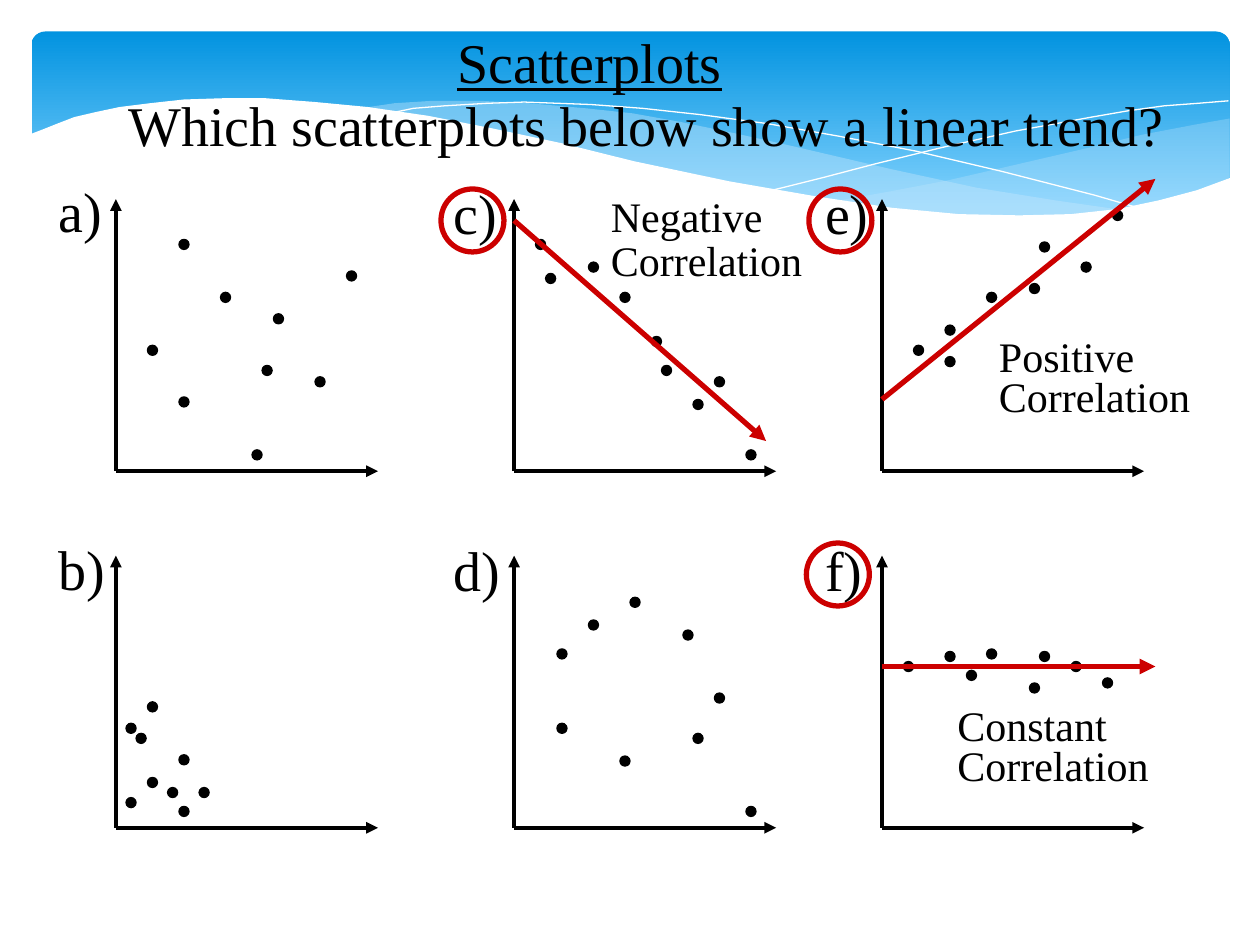
from lxml.etree import SubElement
from pptx import Presentation
from pptx.dml.color import RGBColor
from pptx.enum.shapes import MSO_CONNECTOR, MSO_SHAPE
from pptx.enum.text import MSO_ANCHOR, MSO_AUTO_SIZE, PP_ALIGN
from pptx.oxml.ns import qn
from pptx.util import Inches, Pt

BLACK = RGBColor(0x00, 0x00, 0x00)
WHITE = RGBColor(0xFF, 0xFF, 0xFF)
RED = RGBColor(0xCC, 0x00, 0x00)
SKY_TOP = RGBColor(0x02, 0x93, 0xE0)
SKY_BOTTOM = RGBColor(0x83, 0xD3, 0xFE)
MIST = RGBColor(0xC6, 0xE7, 0xFC)
FONT = "Times New Roman"

# Grid of plots: y axes, x axes, axis lengths
COL_X = (0.92, 4.08, 7)
ROW_Y = (3.74, 6.57)
AXIS_W, AXIS_H = 2.08, 2.16
DOT, RING = 0.08, 0.5

# Banner waves: outline, fill opacity in percent (None for a thin white line)
WAVES = [
    ([(9.76, 0.94), (9.48, 0.99), (9.06, 1.07), (8.61, 1.18), (8.05, 1.31),
      (7.53, 1.43), (7.06, 1.52), (6.61, 1.6), (7.05, 1.65), (7.45, 1.69),
      (7.81, 1.72), (8.24, 1.72), (8.63, 1.7), (8.97, 1.65), (9.28, 1.58),
      (9.49, 1.52), (9.76, 1.41)], MIST, 29),
    ([(8.93, 1.67), (8.37, 1.59), (7.75, 1.49), (7.06, 1.34), (6.29, 1.16),
      (5.84, 1.06), (5.41, 0.97), (5.02, 0.9), (4.65, 0.86), (4.2, 0.82),
      (3.8, 0.8), (3.44, 0.8), (3.13, 0.82), (2.86, 0.86), (3.23, 0.9),
      (3.62, 0.97), (4.04, 1.06), (4.49, 1.16), (5.3, 1.35), (6.01, 1.5),
      (6.5, 1.58), (6.95, 1.65), (7.48, 1.7), (7.96, 1.73), (8.48, 1.72)],
     MIST, 40),
    ([(3.09, 0.9), (3.28, 0.86), (3.53, 0.84), (3.87, 0.82), (4.16, 0.81),
      (4.69, 0.83), (5.1, 0.86), (5.56, 0.91), (6.08, 0.98), (6.65, 1.08),
      (7.27, 1.2), (7.95, 1.36), (8.69, 1.55), (9.07, 1.66)], None, None),
    ([(6.13, 1.51), (6.53, 1.41), (6.95, 1.3), (7.48, 1.17), (8.06, 1.04),
      (8.66, 0.93), (8.95, 0.88), (9.24, 0.84), (9.51, 0.82), (9.75, 0.8)],
     None, None),
    ([(9.77, 1.41), (9.5, 1.51), (9.2, 1.59), (8.87, 1.66), (8.5, 1.7),
      (8.09, 1.71), (7.61, 1.7), (7.08, 1.65), (6.48, 1.56), (5.79, 1.44),
      (5.03, 1.28), (4.47, 1.14), (3.91, 1.02), (3.4, 0.92), (2.92, 0.85),
      (2.5, 0.81), (2.11, 0.78), (1.77, 0.78), (1.46, 0.79), (1.19, 0.82),
      (0.95, 0.85), (0.76, 0.89), (0.59, 0.93), (0.46, 0.98), (0.36, 1.02),
      (0.23, 1.07), (0.23, 2.24), (9.77, 2.24)], WHITE, 100),
]

# Plots: column, row, label, label place, dots measured from the origin
PLOTS = [
    (0, 0, "a)", (0.37, 1.35),
     [(0.29, 0.96), (1.29, 1.21), (0.54, 0.55), (1.62, 0.71), (0.87, 1.38),
      (1.12, 0.13), (1.87, 1.55), (1.2, 0.8), (0.54, 1.8)]),
    (1, 0, "c)", (3.5, 1.37),
     [(0.29, 1.53), (1.46, 0.53), (0.63, 1.62), (1.63, 0.71), (0.88, 1.38),
      (1.88, 0.13), (1.13, 1.03), (1.21, 0.8), (0.21, 1.8)]),
    (2, 0, "e)", (6.45, 1.37),
     [(0.29, 0.96), (1.29, 1.78), (0.54, 1.12), (1.62, 1.62), (0.87, 1.38),
      (1.87, 2.03), (1.21, 1.45), (0.54, 0.87)]),
    (0, 1, "b)", (0.37, 4.19),
     [(0.29, 0.96), (0.12, 0.2), (0.54, 0.54), (0.2, 0.71), (0.7, 0.28),
      (0.54, 0.13), (0.29, 0.36), (0.12, 0.79), (0.45, 0.28)]),
    (1, 1, "d)", (3.5, 4.2),
     [(1.38, 1.53), (0.88, 0.53), (0.63, 1.61), (1.46, 0.71), (0.38, 1.38),
      (1.88, 0.13), (1.63, 1.03), (0.38, 0.79), (0.96, 1.79)]),
    (2, 1, "f)", (6.45, 4.2),
     [(0.21, 1.28), (0.54, 1.36), (1.54, 1.28), (1.29, 1.36), (0.87, 1.38),
      (1.79, 1.15), (0.71, 1.21), (1.21, 1.11)]),
]

# Answers: column, row, ring place, trend from and to, word, note place, spacing
ANSWERS = [
    (1, 0, (3.5, 1.5), (0, 1.99), (2, 0.24),
     "Negative", (4.75, 1.46, 1.72, 0.86), (1, 0.9)),
    (2, 0, (6.42, 1.5), (0, 0.57), (2.17, 2.32),
     "Positive", (7.83, 2.65, 1.72, 0.74), (0.8, 0.8)),
    (2, 1, (6.4, 4.31), (0, 1.28), (2.17, 1.28),
     "Constant", (7.5, 5.58, 1.72, 0.74), (0.8, 0.8)),
]


def on_slide(col, row, point):
    """Turn a point of a plot into slide inches."""
    return COL_X[col] + point[0], ROW_Y[row] - point[1]


def write(tf, lines, size, spacing=(1,), underline=None):
    tf.word_wrap = False
    tf.auto_size = MSO_AUTO_SIZE.NONE
    tf.vertical_anchor = MSO_ANCHOR.TOP
    for i, (text, gap) in enumerate(zip(lines, spacing)):
        p = tf.paragraphs[0] if i == 0 else tf.add_paragraph()
        p.alignment = PP_ALIGN.LEFT
        p.line_spacing = gap
        r = p.add_run()
        r.text = text
        r.font.name, r.font.size = FONT, Pt(size)
        r.font.color.rgb, r.font.underline = BLACK, underline


def add_text(s, box, lines, size, spacing=(1,)):
    sp = s.shapes.add_textbox(*map(Inches, box))
    write(sp.text_frame, lines, size, spacing)


def add_title(s, box, text):
    sp = s.shapes.title
    sp.left, sp.top, sp.width, sp.height = map(Inches, box)
    write(sp.text_frame, [text], 32, underline=True)


def add_arrow(s, start, end, color, width):
    ln = s.shapes.add_connector(MSO_CONNECTOR.STRAIGHT,
                                *map(Inches, (*start, *end)))
    ln.line.color.rgb, ln.line.width = color, Pt(width)
    SubElement(ln.line._get_or_add_ln(), qn("a:tailEnd"), type="triangle")
    SubElement(ln._element.spPr, qn("a:effectLst"))


def add_circle(s, left, top, size, color, width, filled):
    sp = s.shapes.add_shape(MSO_SHAPE.OVAL, *map(Inches, (left, top, size, size)))
    sp.shadow.inherit = False
    if filled:
        sp.fill.solid()
        sp.fill.fore_color.rgb = color
    else:
        sp.fill.background()
    sp.line.color.rgb, sp.line.width = color, Pt(width)


def add_wave(s, points, color, opacity):
    pts = [(Inches(x), Inches(y)) for x, y in points]
    fb = s.shapes.build_freeform(*pts[0], scale=1.0)
    fb.add_line_segments(pts[1:], close=color is not None)
    sp = fb.convert_to_shape()
    sp.shadow.inherit = False
    if color is None:
        sp.fill.background()
        sp.line.color.rgb, sp.line.width = WHITE, Pt(0)
        return
    sp.fill.solid()
    sp.fill.fore_color.rgb = color
    sp.line.fill.background()
    if opacity < 100:
        clr = sp._element.spPr.find(qn("a:solidFill"))[0]
        SubElement(clr, qn("a:alpha"), val=str(opacity * 1000))


def add_banner(s):
    sp = s.shapes.add_shape(MSO_SHAPE.ROUNDED_RECTANGLE,
                            *map(Inches, (0.25, 0.25, 9.51, 1.56)))
    sp.adjustments[0] = 0.07
    sp.shadow.inherit = False
    sp.line.fill.background()
    sp.fill.gradient()
    sp.fill.gradient_angle = 270
    stops = zip(sp.fill.gradient_stops, (SKY_TOP, SKY_BOTTOM), (0, 0.9))
    for stop, color, position in stops:
        stop.color.rgb, stop.position = color, position
    for wave in WAVES:
        add_wave(s, *wave)


def add_plot(s, col, row, label, place, dots):
    origin = on_slide(col, row, (0, 0))
    for end in ((0, AXIS_H), (AXIS_W, 0)):
        add_arrow(s, origin, on_slide(col, row, end), BLACK, 2.25)
    for dot in dots:
        x, y = on_slide(col, row, dot)
        add_circle(s, x - DOT / 2, y - DOT / 2, DOT, BLACK, 0.75, True)
    add_text(s, (*place, 0.56, 0.63), [label], 32)


def add_answer(s, col, row, ring, start, end, word, box, spacing):
    add_circle(s, *ring, RING, RED, 3, False)
    add_arrow(s, on_slide(col, row, start), on_slide(col, row, end), RED, 3)
    add_text(s, box, [word, "Correlation"], 24, spacing)


def main():
    prs = Presentation()
    prs.slide_width, prs.slide_height = Inches(10), Inches(7.5)
    s = prs.slides.add_slide(prs.slide_layouts[5])
    add_banner(s)
    # Bring the title in front of the banner
    s.shapes._spTree.append(s.shapes.title._element)
    add_title(s, (3.53, 0.17, 2.5, 0.63), "Scatterplots")
    add_text(s, (0.92, 0.67, 8.43, 0.63),
             ["Which scatterplots below show a linear trend?"], 32)
    for plot in PLOTS:
        add_plot(s, *plot)
    for answer in ANSWERS:
        add_answer(s, *answer)
    prs.save("out.pptx")


if __name__ == "__main__":
    main()
